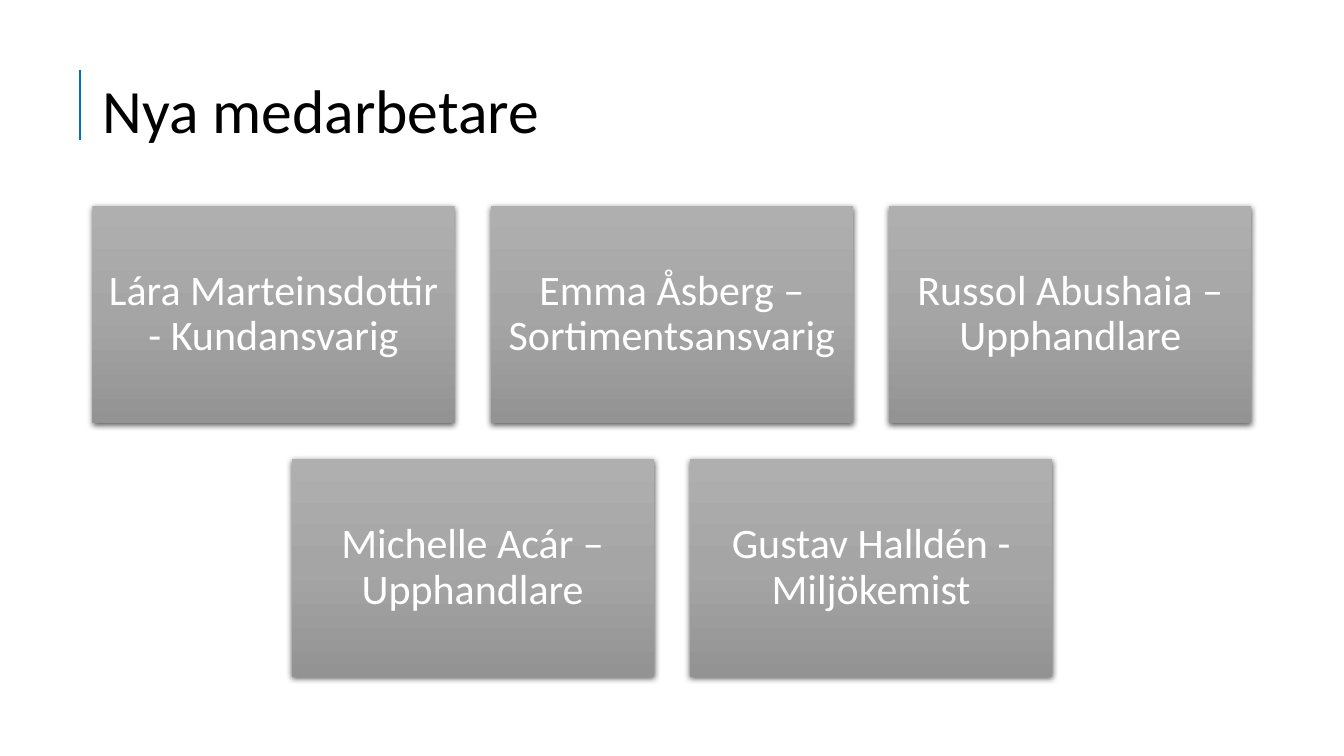
"""Build the slide that presents the new colleagues as centred rows of tiles."""
from copy import deepcopy
from dataclasses import dataclass

from lxml.etree import SubElement
from pptx import Presentation
from pptx.dml.color import RGBColor
from pptx.enum.shapes import MSO_CONNECTOR, MSO_SHAPE
from pptx.enum.text import MSO_ANCHOR, PP_ALIGN
from pptx.oxml.ns import qn
from pptx.shapes.autoshape import Shape
from pptx.slide import Slide
from pptx.util import Cm, Length, Pt

FONT = "Calibri"
BLACK = RGBColor(0x00, 0x00, 0x00)
WHITE = RGBColor(0xFF, 0xFF, 0xFF)
BLUE = RGBColor(0x00, 0x70, 0xC0)
LIGHT_GRAY = RGBColor(0xAF, 0xAF, 0xAF)
MIDDLE_GRAY = RGBColor(0xA5, 0xA5, 0xA5)
DARK_GRAY = RGBColor(0x93, 0x93, 0x93)
TILE_STOPS = ((0, LIGHT_GRAY), (0.5, MIDDLE_GRAY), (1, DARK_GRAY))

SLIDE_WIDTH, SLIDE_HEIGHT = Cm(33.87), Cm(19.05)
TILE_WIDTH, TILE_HEIGHT = Cm(9.13), Cm(5.48)
TILE_GAP = Cm(0.91)
TILES_TOP = Cm(5.18)
TILE_INSET = Cm(0.3)


@dataclass(frozen=True)
class Colleague:
    name: str
    dash: str
    role: str


ROWS = (
    (
        Colleague("Lára Marteinsdottir", "-", "Kundansvarig"),
        Colleague("Emma Åsberg", "–", "Sortimentsansvarig"),
        Colleague("Russol Abushaia", "–", "Upphandlare"),
    ),
    (
        Colleague("Michelle Acár", "–", "Upphandlare"),
        Colleague("Gustav Halldén", "-", "Miljökemist"),
    ),
)


def write_text(shape: Shape, text: str, size: int, color: RGBColor, alignment: PP_ALIGN) -> None:
    frame = shape.text_frame
    frame.word_wrap = True
    frame.vertical_anchor = MSO_ANCHOR.MIDDLE
    paragraph = frame.paragraphs[0]
    paragraph.text = text
    paragraph.alignment = alignment
    paragraph.line_spacing = 0.9
    paragraph.font.name = FONT
    paragraph.font.size = Pt(size)
    paragraph.font.color.rgb = color


def fill_with_gradient(shape: Shape) -> None:
    shape.fill.gradient()
    shape.fill.gradient_angle = 270
    stop_list = shape.element.spPr.find(qn("a:gradFill")).find(qn("a:gsLst"))
    stop_list.append(deepcopy(stop_list[-1]))
    for stop, (position, color) in zip(shape.fill.gradient_stops, TILE_STOPS):
        stop.position = position
        stop.color.rgb = color


def add_shadow(shape: Shape) -> None:
    shape.shadow.inherit = False
    effects = shape.element.spPr.find(qn("a:effectLst"))
    shadow = SubElement(effects, qn("a:outerShdw"), blurRad=str(Pt(4.5)), dist=str(Pt(1.5)),
                        dir="5400000", algn="ctr", rotWithShape="0")
    color = SubElement(shadow, qn("a:srgbClr"), val=str(BLACK))
    SubElement(color, qn("a:alpha"), val="63000")


def add_title(slide: Slide) -> None:
    line = slide.shapes.add_connector(MSO_CONNECTOR.STRAIGHT, Cm(2.01), Cm(1.76), Cm(2.01), Cm(3.54))
    line.line.color.rgb = BLUE
    line.line.width = Pt(1.5)
    SubElement(line.element.spPr, qn("a:effectLst"))
    title = slide.shapes.add_textbox(Cm(2.33), Cm(1.01), Cm(29.21), Cm(3.68))
    write_text(title, "Nya medarbetare", 44, BLACK, PP_ALIGN.LEFT)


def add_tile(slide: Slide, colleague: Colleague, left: Length, top: Length) -> None:
    tile = slide.shapes.add_shape(MSO_SHAPE.RECTANGLE, left, top, TILE_WIDTH, TILE_HEIGHT)
    fill_with_gradient(tile)
    tile.line.fill.background()
    add_shadow(tile)
    frame = tile.text_frame
    frame.margin_left = frame.margin_right = TILE_INSET
    frame.margin_top = frame.margin_bottom = TILE_INSET
    text = f"{colleague.name} {colleague.dash} {colleague.role}"
    write_text(tile, text, 30, WHITE, PP_ALIGN.CENTER)


def add_row(slide: Slide, colleagues: tuple[Colleague, ...], top: Length) -> None:
    pitch = TILE_WIDTH + TILE_GAP
    row_left = (SLIDE_WIDTH - len(colleagues) * pitch + TILE_GAP) // 2
    for column, colleague in enumerate(colleagues):
        add_tile(slide, colleague, Length(row_left + column * pitch), top)


def main() -> None:
    presentation = Presentation()
    presentation.slide_width = SLIDE_WIDTH
    presentation.slide_height = SLIDE_HEIGHT
    slide = presentation.slides.add_slide(presentation.slide_layouts[6])
    add_title(slide)
    for index, colleagues in enumerate(ROWS):
        add_row(slide, colleagues, Length(TILES_TOP + index * (TILE_HEIGHT + TILE_GAP)))
    presentation.save("out.pptx")


if __name__ == "__main__":
    main()
